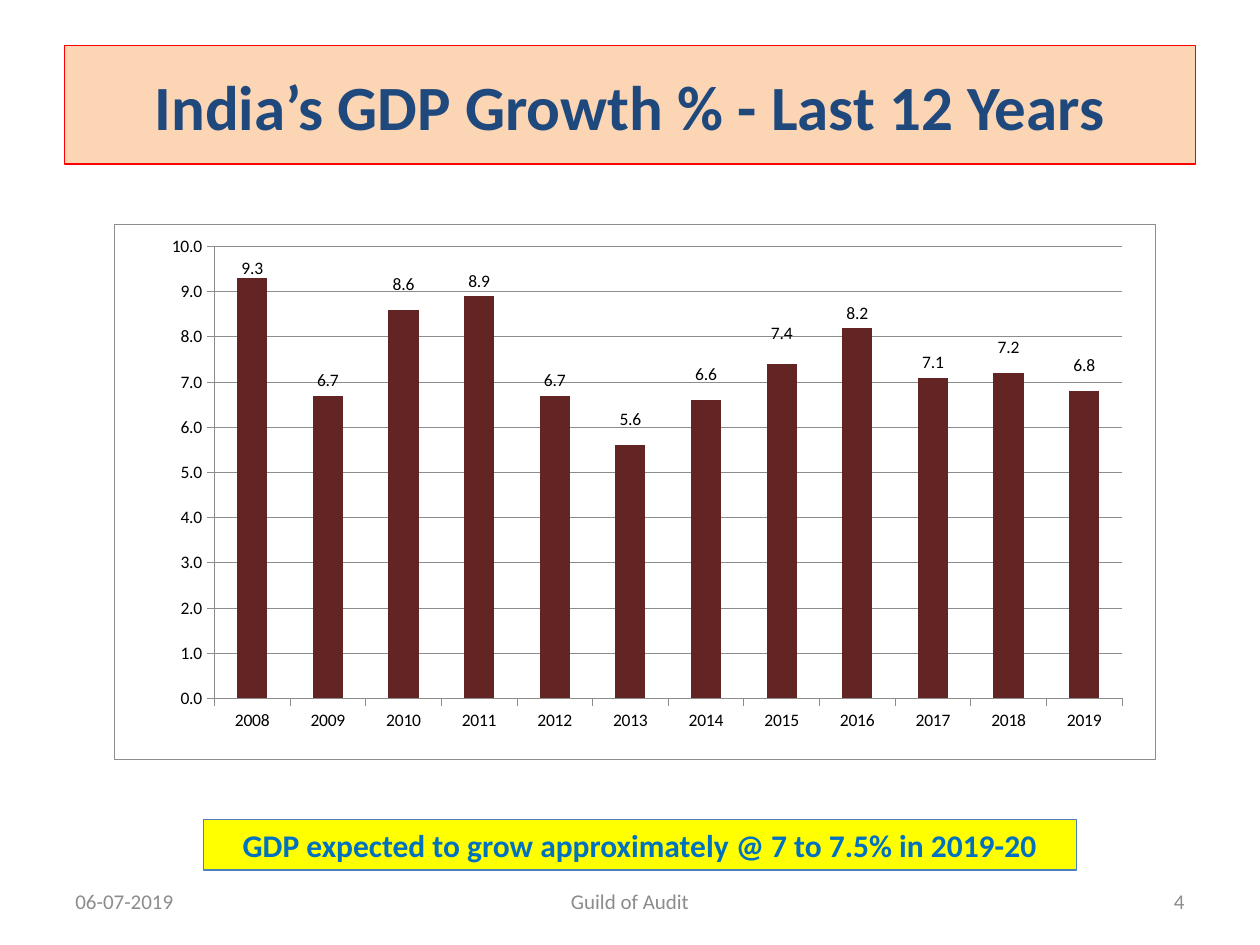
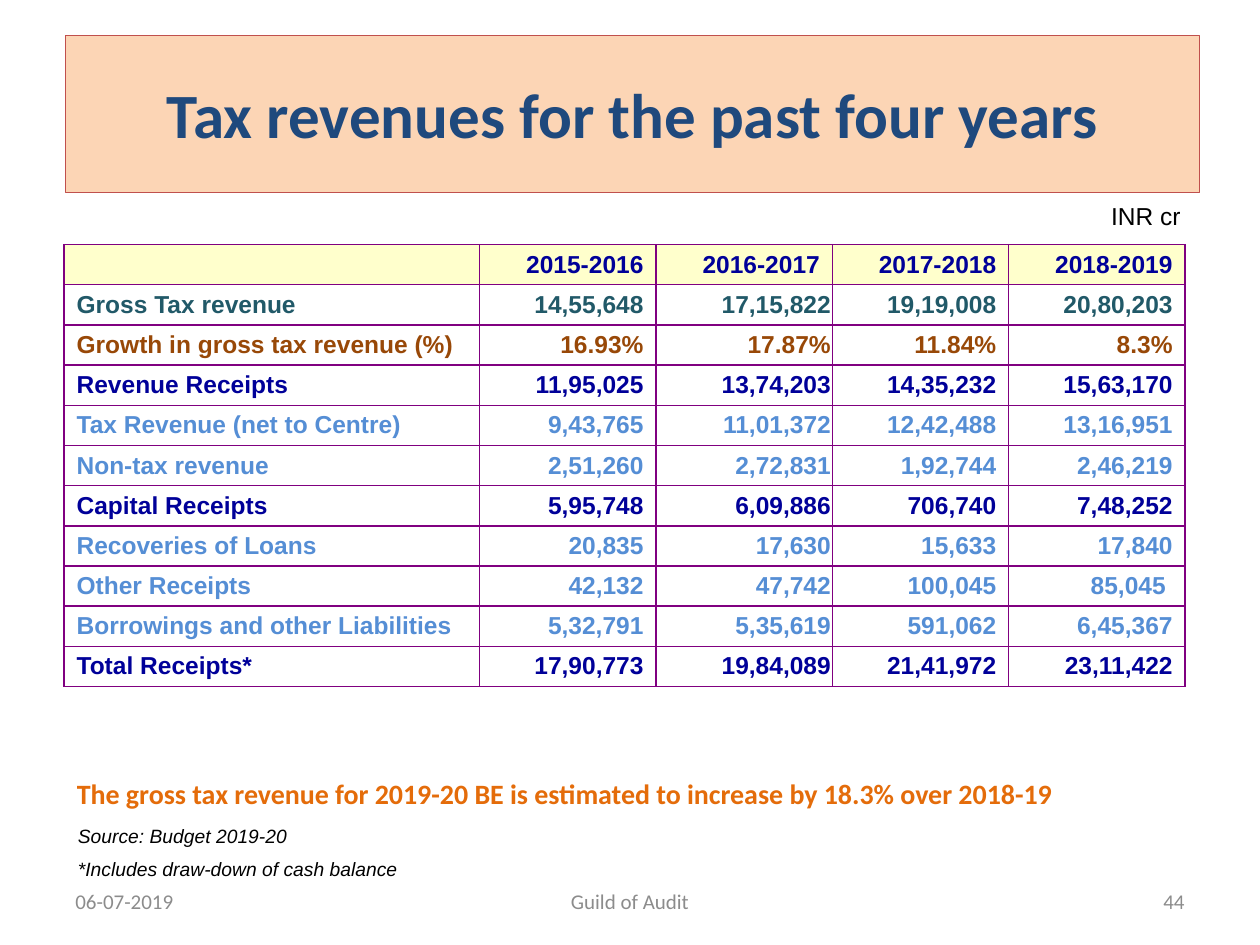
from lxml import etree
from pptx import Presentation
from pptx import util as u
from pptx.chart import data as chart_data
from pptx.dml import color
from pptx.enum import chart as ce
from pptx.enum import shapes, text
from pptx.oxml import ns, parse_xml

COLORS = {
    "band": "FCD5B5", "title": "1F497D", "red": "FF0000", "brick": "C0504D",
    "footer": "8C8C8C", "yellow": "FFFF00", "blue": "4F81BD", "azure": "0070C0",
    "bar": "632523", "axis": "8C8C8C", "black": "000000", "white": "FFFFFF",
    "header": "FFFFCC", "border": "800080", "navy": "000099", "teal": "215968",
    "brown": "984807", "sky": "558ED5", "orange": "E46C0A",
}
LEFT, CENTER, RIGHT = text.PP_ALIGN.LEFT, text.PP_ALIGN.CENTER, text.PP_ALIGN.RIGHT
TOP, MIDDLE = text.MSO_ANCHOR.TOP, text.MSO_ANCHOR.MIDDLE

GDP_GROWTH = {
    "2008": 9.3, "2009": 6.7, "2010": 8.6, "2011": 8.9, "2012": 6.7, "2013": 5.6,
    "2014": 6.6, "2015": 7.4, "2016": 8.2, "2017": 7.1, "2018": 7.2, "2019": 6.8,
}
LABEL_SHIFTS = {
    0: (0, 0.01), 2: (0, -0.02), 5: (0, -0.02), 6: (0, -0.02),
    7: (0, -0.03), 10: (0, -0.02), 11: (0, -0.02),
}
YEARS = ["2015-2016", "2016-2017", "2017-2018", "2018-2019"]
RECEIPTS = [
    ("teal", "Gross Tax revenue", "14,55,648", "17,15,822", "19,19,008", "20,80,203"),
    ("brown", "Growth in gross tax revenue (%)", "16.93%", "17.87%", "11.84%", "8.3%"),
    ("navy", "Revenue Receipts", "11,95,025", "13,74,203", "14,35,232", "15,63,170"),
    ("sky", "Tax Revenue (net to Centre)", "9,43,765", "11,01,372", "12,42,488", "13,16,951"),
    ("sky", "Non-tax revenue", "2,51,260", "2,72,831", "1,92,744", "2,46,219"),
    ("navy", "Capital Receipts", "5,95,748", "6,09,886", "706,740", "7,48,252"),
    ("sky", "Recoveries of Loans", "20,835", "17,630", "15,633", "17,840"),
    ("sky", "Other Receipts", "42,132", "47,742", "100,045", "85,045 "),
    ("sky", "Borrowings and other Liabilities", "5,32,791", "5,35,619", "591,062", "6,45,367"),
    ("navy", "Total Receipts*", "17,90,773", "19,84,089", "21,41,972", "23,11,422"),
]


def rgb(name):
    return color.RGBColor.from_string(COLORS[name])


def cm(box):
    return [u.Cm(length) for length in box]


def style_font(font, size, hue, face="Calibri", bold=False, italic=False):
    font.size, font.name, font.bold, font.italic = u.Pt(size), face, bold, italic
    font.color.rgb = rgb(hue)


def write(frame, lines, align, anchor, size, hue, space_before=0, **style):
    frame.word_wrap = True
    frame.vertical_anchor = anchor
    for index, line in enumerate(lines):
        paragraph = frame.add_paragraph() if index else frame.paragraphs[0]
        paragraph.alignment = align
        paragraph.space_before = u.Pt(space_before)
        run = paragraph.add_run()
        run.text = line
        style_font(run.font, size, hue, **style)


def label(slide, box, lines, align, anchor, size, hue, **style):
    write(slide.shapes.add_textbox(*cm(box)).text_frame,
          lines, align, anchor, size, hue, **style)


def panel(slide, box, line, fill, edge, anchor, size, hue):
    band = slide.shapes.add_shape(shapes.MSO_SHAPE.RECTANGLE, *cm(box))
    band.shadow.inherit = False
    band.fill.solid()
    band.fill.fore_color.rgb = rgb(fill)
    band.line.color.rgb = rgb(edge)
    band.line.width = u.Pt(0.75)
    write(band.text_frame, [line], CENTER, anchor, size, hue, bold=True)


def title_band(slide, box, title, edge):
    panel(slide, box, title, "band", edge, MIDDLE, 36, "title")


def footer(slide, box, number):
    left, top, width, height = box
    side, middle = 5.92, 8.05
    parts = [
        (left, side, "06-07-2019", LEFT),
        (left + (width - middle) / 2, middle, "Guild of Audit", CENTER),
        (left + width - side, side, str(number), RIGHT),
    ]
    for part_left, part_width, words, align in parts:
        label(slide, (part_left, top, part_width, height), [words],
              align, MIDDLE, 12, "footer")


def manual_layout(x, y, size=""):
    return parse_xml(
        f'<c:layout {ns.nsdecls("c")}><c:manualLayout>{size}'
        f'<c:x val="{x}"/><c:y val="{y}"/></c:manualLayout></c:layout>')


def area_style(border):
    outline = (f'<a:ln w="6350"><a:solidFill><a:srgbClr val="{COLORS["axis"]}"/>'
               '</a:solidFill></a:ln>' if border else '<a:ln><a:noFill/></a:ln>')
    return parse_xml(
        f'<c:spPr {ns.nsdecls("c", "a")}><a:solidFill>'
        f'<a:srgbClr val="{COLORS["white"]}"/></a:solidFill>{outline}</c:spPr>')


def frame_plot(chart):
    chart_node = chart.element.find(ns.qn("c:chart"))
    chart_node.addnext(area_style(True))
    plot_area = chart_node.find(ns.qn("c:plotArea"))
    for layout in plot_area.findall(ns.qn("c:layout")):
        plot_area.remove(layout)
    layout = manual_layout(0.096, 0.041, '<c:layoutTarget val="inner"/>'
                           '<c:xMode val="edge"/><c:yMode val="edge"/>')
    for tag, share in (("c:w", 0.872), ("c:h", 0.845)):
        etree.SubElement(layout[0], ns.qn(tag)).set("val", str(share))
    plot_area.insert(0, layout)
    plot_area.append(area_style(False))


def growth_chart(slide, box):
    growth = chart_data.CategoryChartData(number_format="0.0")
    growth.categories = list(GDP_GROWTH)
    growth.add_series("Series 1", list(GDP_GROWTH.values()))
    chart = slide.shapes.add_chart(
        ce.XL_CHART_TYPE.COLUMN_CLUSTERED, *cm(box), growth).chart
    chart.has_legend = chart.has_title = False
    style_font(chart.font, 10, "black")
    frame_plot(chart)

    years, percent = chart.category_axis, chart.value_axis
    percent.minimum_scale, percent.maximum_scale, percent.major_unit = 0, 10, 1
    percent.has_major_gridlines = True
    percent.tick_labels.number_format = "0.0"
    percent.tick_labels.number_format_is_linked = False
    for axis in (years, percent):
        axis.major_tick_mark = ce.XL_TICK_MARK.OUTSIDE
        style_font(axis.tick_labels.font, 10, "black")
    for rule in (years.format.line, percent.format.line,
                 percent.major_gridlines.format.line):
        rule.color.rgb = rgb("axis")
        rule.width = u.Pt(0.5)

    plot = chart.plots[0]
    plot.gap_width = 150
    plot.vary_by_categories = False
    bars = plot.series[0]
    bars.format.fill.solid()
    bars.format.fill.fore_color.rgb = rgb("bar")
    values = bars.data_labels
    values.show_value = True
    values.number_format = "0.0"
    values.number_format_is_linked = False
    values.position = ce.XL_LABEL_POSITION.OUTSIDE_END
    style_font(values.font, 10, "black")
    for leader_lines in values._element.findall(ns.qn("c:showLeaderLines")):
        leader_lines.set("val", "0")
    for index, shift in LABEL_SHIFTS.items():
        point_label = bars.points[index].data_label
        point_label.position = ce.XL_LABEL_POSITION.OUTSIDE_END
        style_font(point_label.font, 10, "black")
        position = values._element.xpath(f'c:dLbl/c:idx[@val="{index}"]')[0]
        position.addnext(manual_layout(*shift))


def border_cell(cell):
    properties = cell._tc.get_or_add_tcPr()
    for index, side in enumerate(("lnL", "lnR", "lnT", "lnB")):
        properties.insert(index, parse_xml(
            f'<a:{side} {ns.nsdecls("a")} w="12700"><a:solidFill>'
            f'<a:srgbClr val="{COLORS["border"]}"/></a:solidFill></a:{side}>'))


def revenue_table(slide, box):
    rows = [("navy", "", *YEARS), *RECEIPTS]
    grid = slide.shapes.add_table(len(rows), len(YEARS) + 1, *cm(box)).table
    grid.first_row = grid.horz_banding = False
    label_width, row_height = 8.38, box[3] / len(rows)
    year_width = (box[2] - label_width) / len(YEARS)
    for column_index, column in enumerate(grid.columns):
        column.width = u.Cm(year_width if column_index else label_width)
    for row_index, (hue, *entries) in enumerate(rows):
        grid.rows[row_index].height = u.Cm(row_height)
        for column_index, entry in enumerate(entries):
            cell = grid.cell(row_index, column_index)
            cell.margin_top = cell.margin_bottom = 0
            tight = row_index and column_index == 2
            cell.margin_right = u.Cm(0.03 if tight else 0.25)
            cell.vertical_anchor = MIDDLE
            if row_index:
                cell.fill.background()
            else:
                cell.fill.solid()
                cell.fill.fore_color.rgb = rgb("header")
            border_cell(cell)
            if entry:
                write(cell.text_frame, [entry], RIGHT if column_index else LEFT,
                      MIDDLE, 14, hue, face="Arial", bold=True)


def growth_slide(slide):
    title_band(slide, (1.3, 0.92, 22.8, 2.39),
               "India’s GDP Growth % - Last 12 Years", "red")
    growth_chart(slide, (2.3, 4.52, 21, 10.8))
    panel(slide, (4.1, 16.52, 17.6, 1.02),
          "GDP expected to grow approximately @ 7 to 7.5% in 2019-20",
          "yellow", "blue", TOP, 18, "azure")


def revenue_slide(slide):
    title_band(slide, (1.32, 0.71, 22.86, 3.17),
               "Tax revenues for the past four years", "brick")
    label(slide, (18.77, 3.92, 5.28, 0.86), ["INR cr"], RIGHT, TOP, 14, "black",
          face="Arial")
    revenue_table(slide, (1.29, 4.93, 22.6, 8.91))
    label(slide, (1.3, 15.52, 22.58, 0.94),
          ["The gross tax revenue for 2019-20 BE is estimated to increase by 18.3% over 2018-19"],
          LEFT, TOP, 16, "orange", bold=True)
    label(slide, (1.32, 16.49, 19.89, 1.42),
          ["Source: Budget 2019-20", "*Includes draw-down of cash balance"],
          LEFT, TOP, 11, "black", space_before=5.5, face="Arial", italic=True)


def main():
    deck = Presentation()
    deck.slide_width, deck.slide_height = u.Cm(25.4), u.Cm(19.05)
    for build, number in ((growth_slide, 4), (revenue_slide, 44)):
        slide = deck.slides.add_slide(deck.slide_layouts[6])
        build(slide)
        footer(slide, (1.27, 17.65, 22.86, 1.02), number)
    deck.save("out.pptx")


if __name__ == "__main__":
    main()
